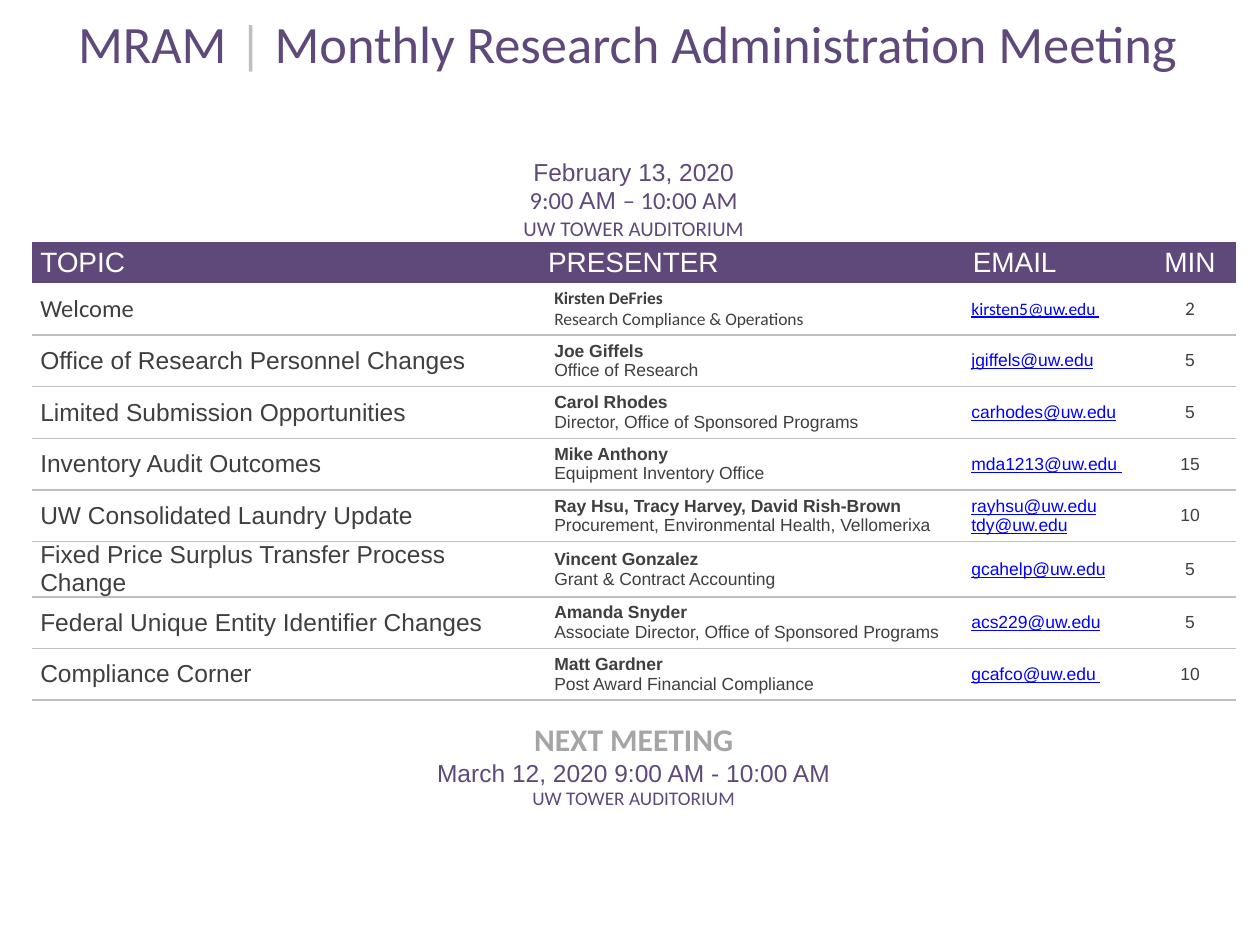
from lxml import etree
from pptx import Presentation
from pptx.dml.color import RGBColor
from pptx.enum.text import MSO_ANCHOR, PP_ALIGN
from pptx.oxml.ns import qn
from pptx.util import Inches, Pt

LEFT, CENTER = PP_ALIGN.LEFT, PP_ALIGN.CENTER
TOP, MIDDLE, BOTTOM = MSO_ANCHOR.TOP, MSO_ANCHOR.MIDDLE, MSO_ANCHOR.BOTTOM
COLORS = {"purple": "5F497A", "rule": "BFBFBF", "white": "FFFFFF",
          "text": "3F3F3F", "link": "0000FF", "muted": "A5A5A5"}
SANS, HUMAN = "Arial", "Calibri"
NO_STYLE = "{2D5ABB26-0587-4C30-8999-92F81FD0307C}"

COLUMNS = [4.03, 3.31, 1.49, 0.73]
TITLE_H, DATE_H, HEADER_H, TOPIC_H, NEXT_H = 0.62, 1.3, 0.33, 0.41, 0.74
HEADINGS = ["TOPIC", "PRESENTER", " EMAIL", "MIN"]
AGENDA = [
    ("Welcome", "Kirsten DeFries", "Research Compliance & Operations",
     ["kirsten5@uw.edu "], 2),
    ("Office of Research Personnel Changes", "Joe Giffels", "Office of Research",
     ["jgiffels@uw.edu"], 5),
    ("Limited Submission Opportunities", "Carol Rhodes",
     "Director, Office of Sponsored Programs", ["carhodes@uw.edu"], 5),
    ("Inventory Audit Outcomes", "Mike Anthony", "Equipment Inventory Office",
     ["mda1213@uw.edu "], 15),
    ("UW Consolidated Laundry Update", "Ray Hsu, Tracy Harvey, David Rish-Brown",
     "Procurement, Environmental Health, Vellomerixa",
     ["rayhsu@uw.edu", "tdy@uw.edu"], 10),
    ("Fixed Price Surplus Transfer Process Change", "Vincent Gonzalez",
     "Grant & Contract Accounting", ["gcahelp@uw.edu"], 5),
    ("Federal Unique Entity Identifier Changes", "Amanda Snyder",
     "Associate Director, Office of Sponsored Programs", ["acs229@uw.edu"], 5),
    ("Compliance Corner", "Matt Gardner", "Post Award Financial Compliance",
     ["gcafco@uw.edu "], 10),
]


def run(text, size, font=SANS, color="text", bold=False, underline=False):
    return text, size, font, color, bold, underline


class AgendaSlide:
    def __init__(self, prs):
        self.s = prs.slides.add_slide(prs.slide_layouts[6])

    def table(self, left, top, widths, heights):
        frame = self.s.shapes.add_table(
            len(heights), len(widths), Inches(left), Inches(top),
            Inches(sum(widths)), Inches(sum(heights)))
        self.tbl = frame.table
        self.tbl.first_row = self.tbl.horz_banding = False
        frame._element.find(".//" + qn("a:tableStyleId")).text = NO_STYLE
        for column, width in zip(self.tbl.columns, widths):
            column.width = Inches(width)
        for row, height in zip(self.tbl.rows, heights):
            row.height = Inches(height)

    def cell(self, row, col, lines, align=LEFT, anchor=MIDDLE, fill="white",
             margin=0.07, margin_top=0, ruled=False):
        cell = self.tbl.cell(row, col)
        cell.margin_left = cell.margin_right = Inches(margin)
        cell.margin_top, cell.margin_bottom = Inches(margin_top), 0
        cell.vertical_anchor = anchor
        if ruled:
            self.bottom_rule(cell)
        cell.fill.solid()
        cell.fill.fore_color.rgb = RGBColor.from_string(COLORS[fill])
        tf = cell.text_frame
        for i, runs in enumerate(lines):
            p = tf.add_paragraph() if i else tf.paragraphs[0]
            p.alignment = align
            for text, size, font, color, bold, underline in runs:
                r = p.add_run()
                r.text = text
                r.font.size, r.font.name = Pt(size), font
                r.font.bold, r.font.underline = bold, underline
                r.font.color.rgb = RGBColor.from_string(COLORS[color])

    def band(self, row, lines, **options):
        last = len(self.tbl.columns) - 1
        self.tbl.cell(row, 0).merge(self.tbl.cell(row, last))
        self.cell(row, 0, lines, align=CENTER, **options)

    def bottom_rule(self, cell):
        line = etree.SubElement(cell._tc.get_or_add_tcPr(), qn("a:lnB"), w=str(Pt(1)))
        solid = etree.SubElement(line, qn("a:solidFill"))
        etree.SubElement(solid, qn("a:srgbClr"), val=COLORS["rule"])

    def topic(self, row, topic, presenter, office, emails, minutes):
        first = row == 3
        font = HUMAN if first else SANS
        links = [run(emails[0], 10, font, "link", underline=True)]
        for email in emails[1:]:
            links += [run(" ", 10), run(email, 10, font, "link", underline=True)]
        self.cell(row, 0, [[run(topic, 14, font)]], ruled=True)
        self.cell(row, 1, [[run(presenter, 10, font, bold=True)], [run(office, 10, font)]],
                  margin=0.12, ruled=True)
        self.cell(row, 2, [links], margin=0.12, ruled=True)
        self.cell(row, 3, [[run(str(minutes), 11 if first else 10, font)]],
                  align=CENTER, ruled=True)


def main():
    prs = Presentation()
    prs.slide_width, prs.slide_height = Inches(10), Inches(7.5)
    slide = AgendaSlide(prs)
    slide.table(0.25, 0, COLUMNS,
                [TITLE_H, DATE_H, HEADER_H] + [TOPIC_H] * len(AGENDA) + [NEXT_H])

    slide.band(0, [[run("MRAM ", 30, HUMAN, "purple"), run("|", 30, HUMAN, "rule"),
                    run(" Monthly Research Administration Meeting ", 30, HUMAN, "purple")]],
               anchor=BOTTOM)
    slide.band(1, [
        [run("February 13, 2020", 14, SANS, "purple")],
        [run("9:00 ", 14, HUMAN, "purple"), run("AM ", 14, SANS, "purple"),
         run("– 10:00 AM", 14, HUMAN, "purple")],
        [run("UW TOWER AUDITORIUM", 12, HUMAN, "purple")],
    ], anchor=BOTTOM)
    for col, heading in enumerate(HEADINGS):
        slide.cell(2, col, [[run(heading, 16, SANS, "white")]], fill="purple",
                   align=CENTER if heading == "MIN" else LEFT)
    for row, entry in enumerate(AGENDA, start=3):
        slide.topic(row, *entry)
    slide.band(3 + len(AGENDA), [
        [run("NEXT MEETING", 18, HUMAN, "muted", bold=True)],
        [run("March 12, 2020 9:00 AM - 10:00 AM", 14, SANS, "purple")],
        [run("UW TOWER AUDITORIUM", 11, HUMAN, "purple")],
    ], anchor=TOP, margin_top=0.17)
    prs.save("out.pptx")


if __name__ == "__main__":
    main()
